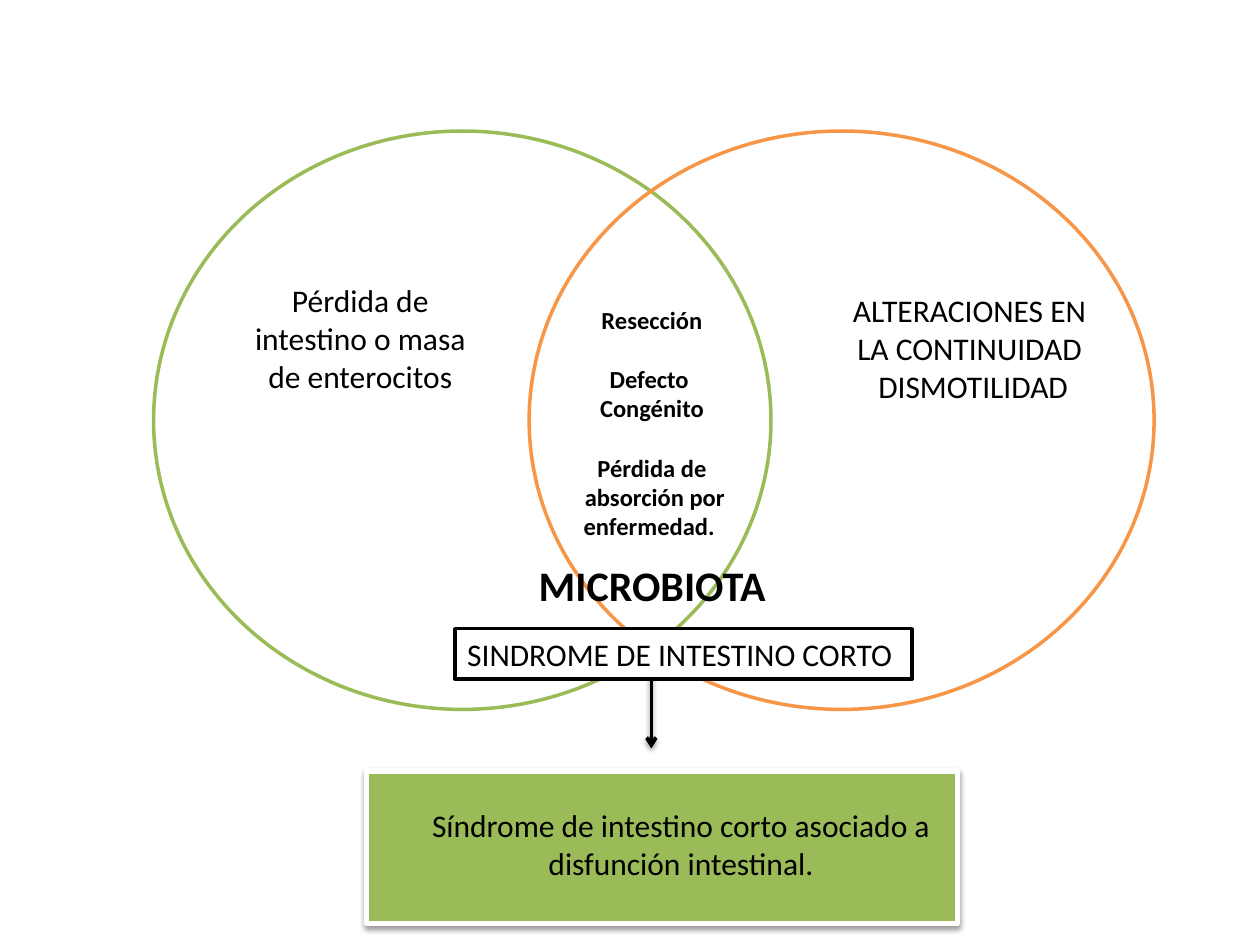
from lxml.etree import SubElement
from pptx import Presentation
from pptx.dml.color import RGBColor
from pptx.enum.shapes import MSO_CONNECTOR, MSO_SHAPE
from pptx.enum.text import MSO_AUTO_SIZE, PP_ALIGN
from pptx.oxml.ns import qn
from pptx.util import Pt

BLACK, WHITE, GREEN, ORANGE = "000000", "FFFFFF", "9BBB59", "F79646"


def color(hex_string):
    return RGBColor.from_string(hex_string)


def set_line(shape, line_color, width):
    shape.line.color.rgb = color(line_color)
    shape.line.width = Pt(width)


def set_fill(shape, fill_color):
    if fill_color:
        shape.fill.solid()
        shape.fill.fore_color.rgb = color(fill_color)
    else:
        shape.fill.background()


def add_soft_shadow(shape):
    """Give the shape a faint shadow that falls straight down."""
    properties = shape._element.spPr
    effects = SubElement(properties, qn("a:effectLst"))
    shadow = SubElement(effects, qn("a:outerShdw"), blurRad=str(Pt(3.1)),
                        dist=str(Pt(1.6)), dir="5400000", rotWithShape="0")
    shade = SubElement(shadow, qn("a:srgbClr"), val=BLACK)
    SubElement(shade, qn("a:alpha"), val="38000")


def add_preset(slide, preset, box, fill_color, line_color, line_width):
    shape = slide.shapes.add_shape(preset, *map(Pt, box))
    set_fill(shape, fill_color)
    set_line(shape, line_color, line_width)
    return shape


def add_text(slide, box, text, size=18, bold=False, wrap=True,
             align=PP_ALIGN.CENTER):
    text_box = slide.shapes.add_textbox(*map(Pt, box))
    frame = text_box.text_frame
    frame.text = text
    frame.word_wrap = wrap
    frame.auto_size = MSO_AUTO_SIZE.SHAPE_TO_FIT_TEXT
    for paragraph in frame.paragraphs:
        paragraph.alignment = align
        for run in paragraph.runs:
            run.font.name = "Calibri"
            run.font.size = Pt(size)
            run.font.bold = bold
            run.font.color.rgb = color(BLACK)
    return text_box


def add_circles(slide, left, top, width, height):
    """Draw two overlapping ellipses that span the box."""
    left_width, right_width = 352.8, 357.1
    circles = (
        (left, left_width, WHITE, GREEN),
        (left + width - right_width, right_width, None, ORANGE),
    )
    for x, circle_width, fill_color, line_color in circles:
        circle = add_preset(slide, MSO_SHAPE.OVAL,
                            (x, top, circle_width, height),
                            fill_color, line_color, 2)
        circle.shadow.inherit = False


def add_circle_texts(slide, left, top):
    add_text(slide, (left + 42.5, top + 82.1, 151.2, 72.7),
             "Pérdida de intestino o masa de enterocitos")
    add_text(slide, (left + 383.8, top + 87.8, 164.9, 72.7),
             "ALTERACIONES EN LA CONTINUIDAD\n DISMOTILIDAD")

    syndrome = add_text(slide, (left + 172.1, top + 284.4, 261.4, 28.8),
                        "SINDROME DE INTESTINO CORTO",
                        wrap=False, align=PP_ALIGN.LEFT)
    set_fill(syndrome, WHITE)
    set_line(syndrome, BLACK, 2)

    causes = add_text(
        slide, (left + 235.5, top + 95.7, 98.6, 159.8),
        "Resección\nDefecto \nCongénito\nPérdida de\n absorción por \nenfermedad. ",
        size=14, bold=True, wrap=False)
    for paragraph in causes.text_frame.paragraphs:
        if paragraph.text.startswith(("Defecto", "Pérdida")):
            paragraph.space_before = Pt(17)

    add_text(slide, (left + 198.8, top + 241.2, 172.1, 36),
             "MICROBIOTA", size=24, bold=True)


def add_outcome(slide, left, top, width, height):
    """Draw the green result panel and the arrow that points down to it."""
    panel = add_preset(slide, MSO_SHAPE.RECTANGLE, (left, top, width, height),
                       GREEN, WHITE, 3)
    add_soft_shadow(panel)

    arrow_x = left + 162.7
    arrow = slide.shapes.add_connector(
        MSO_CONNECTOR.STRAIGHT, Pt(arrow_x), Pt(top - 56.1),
        Pt(arrow_x), Pt(top - 12.9))
    set_line(arrow, BLACK, 2)
    SubElement(arrow.line._get_or_add_ln(), qn("a:tailEnd"), type="arrow")
    add_soft_shadow(arrow)

    add_text(slide, (left + 28.1, top + 16.6, 303.1, 51.1),
             "Síndrome de intestino corto asociado a\ndisfunción intestinal.",
             wrap=False)


def main():
    presentation = Presentation()
    presentation.slide_width, presentation.slide_height = Pt(720), Pt(540)
    slide = presentation.slides.add_slide(presentation.slide_layouts[6])
    venn_left, venn_top = 87.8, 74.9
    add_circles(slide, venn_left, venn_top, 571.7, 330.5)
    add_outcome(slide, 209.5, 440.6, 337.7, 87.1)
    add_circle_texts(slide, venn_left, venn_top)
    presentation.save("out.pptx")


if __name__ == "__main__":
    main()
